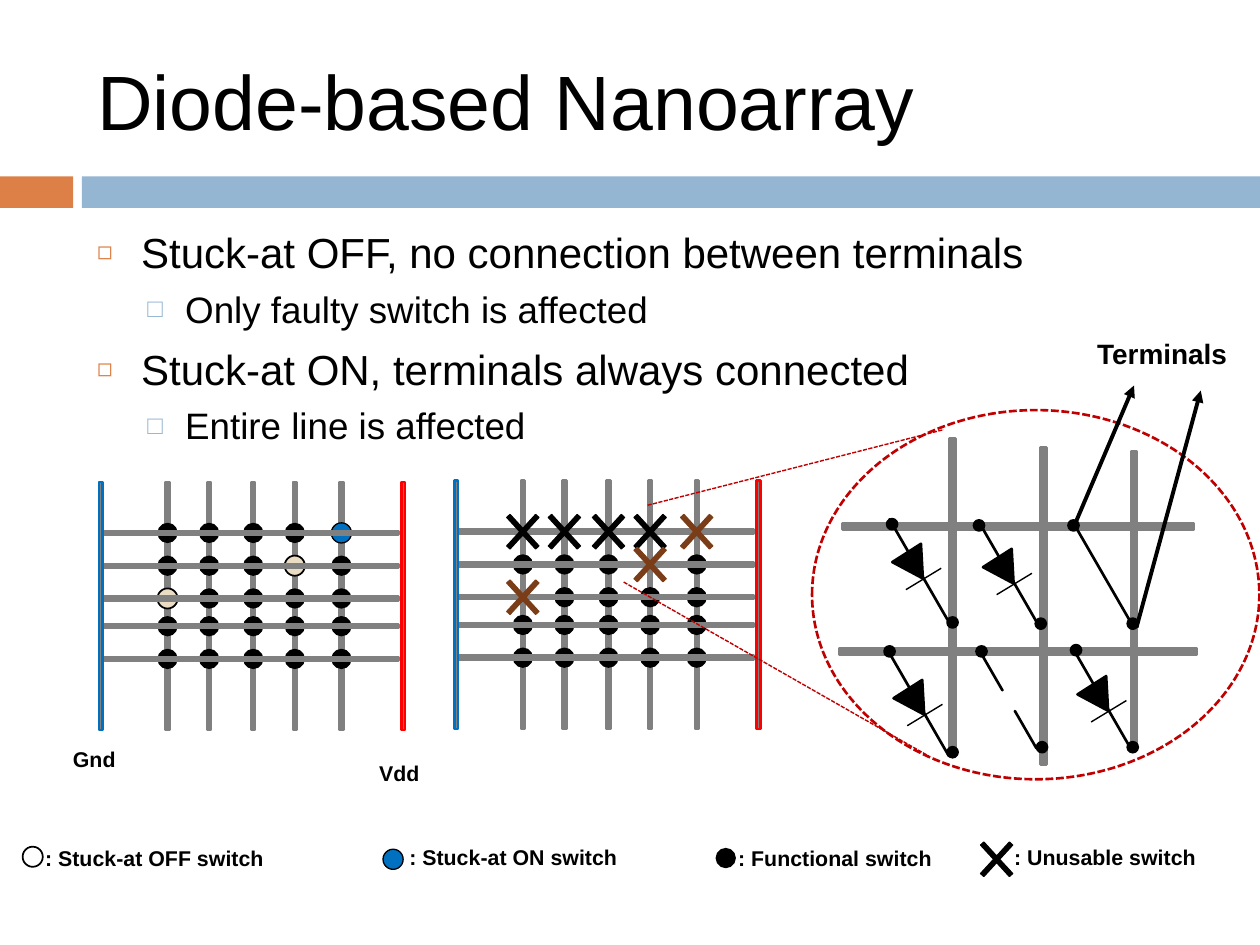
"""Build the diode-based nanoarray slide with its two crossbars and zoomed detail."""
from lxml import etree
from pptx import Presentation
from pptx.dml.color import RGBColor
from pptx.enum.dml import MSO_LINE
from pptx.enum.shapes import MSO_CONNECTOR, MSO_SHAPE
from pptx.enum.text import MSO_ANCHOR, MSO_AUTO_SIZE, PP_ALIGN
from pptx.oxml.ns import qn
from pptx.util import Inches, Pt

RECT, OVAL = MSO_SHAPE.RECTANGLE, MSO_SHAPE.OVAL
TRIANGLE, CROSS = MSO_SHAPE.ISOSCELES_TRIANGLE, MSO_SHAPE.MATH_MULTIPLY
DASH, STRAIGHT = MSO_LINE.SQUARE_DOT, MSO_CONNECTOR.STRAIGHT
LEFT, MIDDLE, TOP = PP_ALIGN.LEFT, MSO_ANCHOR.MIDDLE, MSO_ANCHOR.TOP
FIT, FIXED = MSO_AUTO_SIZE.SHAPE_TO_FIT_TEXT, MSO_AUTO_SIZE.NONE

FONT = "Arial"
COLORS = {
    "black": "000000", "white": "FFFFFF", "wire": "808080", "orange": "DD8047",
    "sky": "94B6D2", "blue": "0070C0", "red": "FF0000", "cream": "EBDDC3",
    "brown": "7B3D17", "zoom": "C00000",
}
TITLE = "Diode-based Nanoarray"
BULLETS = [
    (0, "Stuck-at OFF, no connection between terminals"),
    (1, "Only faulty switch is affected"),
    (0, "Stuck-at ON, terminals always connected"),
    (1, "Entire line is affected"),
]
LEVELS = [
    {"size": 24, "before": 7, "margin": 0.35, "hang": 0.35, "char": "◻", "color": "orange", "pct": 60},
    {"size": 21, "before": 5.5, "margin": 0.7, "hang": 0.3, "char": "□", "color": "sky", "pct": 70},
]
BANDS = [(0, 0.58, "orange"), (0.65, 9.35, "sky")]

COLS = [1.33, 1.66, 2.01, 2.34, 2.71]
ROWS = [4.23, 4.49, 4.75, 4.97, 5.23]
RAILS = [(0.8, "blue"), (3.2, "red")]
ARRAYS = [
    (0, 0, ["FFFFN", "FFFSF", "SFFFF", "FFFFF", "FFFFF"]),
    (2.82, -0.01, ["UUUUB", "FFFBF", "BFFFF", "FFFFF", "FFFFF"]),
]
SWITCHES = {
    "F": (0.14, "black", 1.5), "N": (0.16, "blue", 0.75),
    "S": (0.16, "cream", 1), "O": (0.16, "white", 1),
}
CROSSES = {"U": "black", "B": "brown"}

ZOOM_LINES = [((5.14, 4.01), (7.49, 3.41)), ((4.95, 4.62), (7.37, 6))]
ZOOM_WIRES = [
    (9, 4.76, 2.35, 90), (8.28, 4.81, 2.52, 90), (7.56, 4.74, 2.52, 90),
    (8.08, 4.18, 2.79, 0), (8.08, 5.17, 2.84, 0),
]
DIODES = [(7.29, 4.52), (8.01, 4.56), (7.3, 5.6), (8.76, 5.57)]
STUCK_ON = (8.75, 4.55)
STUCK_OFF = [(7.87, 5.33), (8.14, 5.79)]
TERMINALS = [
    (7.08, 4.16), (7.77, 4.17), (8.52, 4.17), (7.56, 4.94), (8.26, 4.95), (8.99, 4.95),
    (7.06, 5.17), (7.79, 5.17), (8.54, 5.16), (7.56, 5.97), (8.27, 5.93), (8.99, 5.93),
]
ARROWS = [((8.54, 4.14), (9, 3.06)), ((9.02, 4.98), (9.53, 3.1))]

LEGEND = [
    ("O", 0.26, 6.8, 0.26, 6.66, 2.16, ": Stuck-at OFF switch"),
    ("N", 3.12, 6.82, 3.15, 6.65, 2.01, ": Stuck-at ON switch"),
    ("F", 5.76, 6.81, 5.76, 6.66, 2.19, ": Functional switch"),
    ("U", 7.91, 6.82, 7.95, 6.65, 2.19, ": Unusable switch"),
]
LABELS = [
    ("Terminals", 8.61, 2.62, 1.34, 0.37, 16),
    ("Vdd", 2.91, 5.98, 0.72, 0.31, 12.2),
    ("Gnd", 0.48, 5.87, 0.72, 0.31, 12.2),
]

prs = Presentation()
prs.slide_width, prs.slide_height = Inches(10), Inches(7.5)
s = prs.slides.add_slide(prs.slide_layouts[1])


def rgb(name):
    return RGBColor.from_string(COLORS[name])


def set_all(obj, values):
    for name, value in values.items():
        setattr(obj, name, value)


def move(sp, x, y, w, h):
    set_all(sp, {"left": Inches(x), "top": Inches(y), "width": Inches(w), "height": Inches(h)})


def add_run(p, text, size, bold=False):
    r = p.add_run()
    r.text = text
    set_all(r.font, {"name": FONT, "size": Pt(size), "bold": bold})
    r.font.color.rgb = rgb("black")


def shape(kind, cx, cy, w, h, fill, line=None, width=1.5, angle=0):
    sp = s.shapes.add_shape(kind, Inches(cx - w / 2), Inches(cy - h / 2), Inches(w), Inches(h))
    set_all(sp, {"rotation": angle})
    sp.shadow.inherit = False
    if fill:
        sp.fill.solid()
        sp.fill.fore_color.rgb = rgb(fill)
    else:
        sp.fill.background()
    if line:
        sp.line.color.rgb = rgb(line)
        sp.line.width = Pt(width)
    else:
        sp.line.fill.background()
    return sp


def line(start, end, color, width, dash=None, arrow=False):
    c = s.shapes.add_connector(STRAIGHT, *map(Inches, start + end))
    c.line.color.rgb = rgb(color)
    set_all(c.line, {"width": Pt(width), "dash_style": dash})
    if arrow:
        etree.SubElement(c.line._get_or_add_ln(), qn("a:tailEnd"), type="triangle")
    etree.SubElement(c._element.spPr, qn("a:effectLst"))


def switch(key, cx, cy):
    if key in CROSSES:
        sp = shape(CROSS, cx, cy, 0.44, 0.48, CROSSES[key], CROSSES[key], 0.75)
        sp.adjustments[0] = 0.079
    else:
        size, fill, width = SWITCHES[key]
        shape(OVAL, cx, cy, size, size, fill, "black", width)


def label(text, x, y, w, h, size):
    tf = s.shapes.add_textbox(Inches(x), Inches(y), Inches(w), Inches(h)).text_frame
    set_all(tf, {"word_wrap": True, "auto_size": FIT})
    add_run(tf.paragraphs[0], text, size, True)


def bullet(p, level, text):
    f = LEVELS[level]
    set_all(p, {"level": level, "alignment": LEFT, "space_before": Pt(f["before"])})
    pPr = p._p.get_or_add_pPr()
    pPr.set("marL", str(Inches(f["margin"])))
    pPr.set("indent", str(-Inches(f["hang"])))
    clr = etree.SubElement(pPr, qn("a:buClr"))
    etree.SubElement(clr, qn("a:srgbClr"), val=COLORS[f["color"]])
    etree.SubElement(pPr, qn("a:buSzPct"), val=str(f["pct"] * 1000))
    etree.SubElement(pPr, qn("a:buFont"), typeface=FONT)
    etree.SubElement(pPr, qn("a:buChar"), char=f["char"])
    add_run(p, text, f["size"])


def crossbar(dx, dy, grid):
    cells = [(key, x + dx, y + dy) for y, keys in zip(ROWS, grid) for x, key in zip(COLS, keys)]
    for x in COLS:
        shape(RECT, x + dx, 4.81 + dy, 1.97, 0.03, "wire", "wire", angle=90)
    for cell in cells:
        if cell[0] in SWITCHES:
            switch(*cell)
    for y in ROWS:
        shape(RECT, 1.99 + dx, y + dy, 2.35, 0.03, "wire", "wire")
    for x, color in RAILS:
        shape(RECT, x + dx, 4.81 + dy, 1.97, 0.03, "wire", color, angle=90)
    for cell in cells:
        if cell[0] in CROSSES:
            switch(*cell)


def zoom():
    shape(OVAL, 8.22, 4.72, 3.55, 2.93, None, "zoom").line.dash_style = DASH
    for start, end in ZOOM_LINES:
        line(start, end, "zoom", 0.79, DASH)
    for x, y, length, angle in ZOOM_WIRES:
        shape(RECT, x, y, length, 0.05, "wire", "wire", angle=angle)
    links = [(c, 0.92) for c in DIODES + [STUCK_ON]] + [(c, 0.34) for c in STUCK_OFF]
    for (x, y), length in links:
        shape(RECT, x, y, length, 0, "black", "black", angle=240)
    for x, y in DIODES:
        shape(TRIANGLE, x - 0.03, y - 0.03, 0.27, 0.24, "black", "black", angle=147.5)
        line((x - 0.1, y + 0.16), (x + 0.18, y - 0.01), "black", 0.79)
    for x, y in TERMINALS:
        shape(OVAL, x, y, 0.08, 0.08, "black", "black")
    for start, end in ARROWS:
        line(start, end, "black", 2.25, arrow=True)


def main():
    title, body = s.placeholders
    move(title, 0.67, 0.25, 8.92, 1.08)
    move(body, 0.67, 1.75, 9.25, 1.87)
    for sp, anchor in ((title, MIDDLE), (body, TOP)):
        set_all(sp.text_frame, {"vertical_anchor": anchor, "auto_size": FIXED, "word_wrap": True})
    p = title.text_frame.paragraphs[0]
    p.alignment = LEFT
    add_run(p, TITLE, 44)
    for i, (level, text) in enumerate(BULLETS):
        tf = body.text_frame
        bullet(tf.add_paragraph() if i else tf.paragraphs[0], level, text)
    for x, w, color in BANDS:
        shape(RECT, x + w / 2, 1.525, w, 0.25, color)
    for array in ARRAYS:
        crossbar(*array)
    zoom()
    for key, cx, cy, x, y, w, text in LEGEND:
        switch(key, cx, cy)
        label(text, x, y, w, 0.31, 12.2)
    for item in LABELS:
        label(*item)
    prs.save("out.pptx")


if __name__ == "__main__":
    main()
